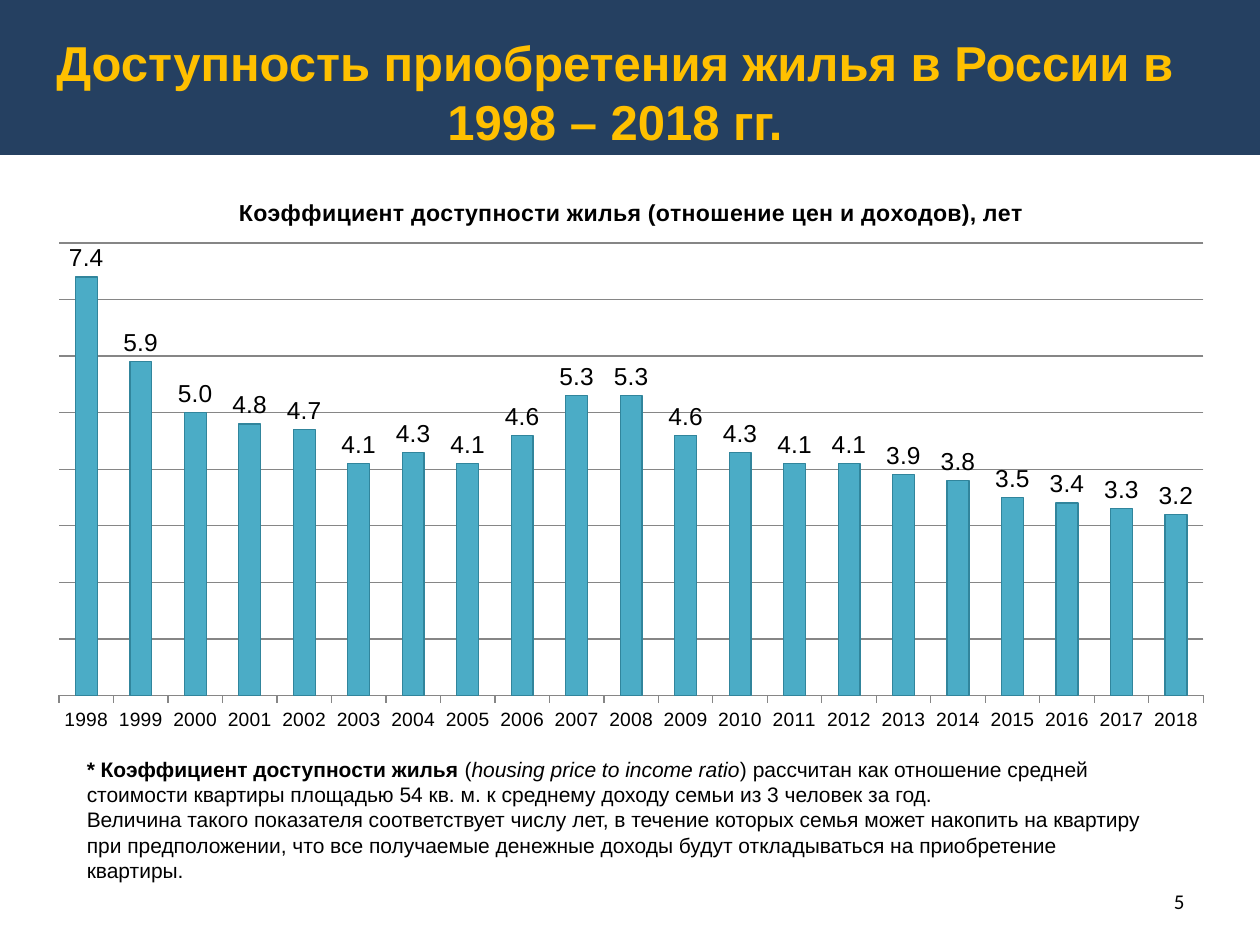
"""Build the slide on housing affordability in Russia, 1998-2018."""
from dataclasses import dataclass

from lxml import etree
from pptx import Presentation
from pptx.chart.data import CategoryChartData
from pptx.dml.color import RGBColor
from pptx.enum import chart as ch, shapes, text
from pptx.oxml.ns import qn
from pptx.util import Inches, Pt

COLORS = {"band": "254061", "title": "FFC000", "text": "000000",
          "bar": "4BACC6", "bar_line": "31859C", "grid": "868686"}
RATIOS = [7.4, 5.9, 5.0, 4.8, 4.7, 4.1, 4.3, 4.1, 4.6, 5.3, 5.3,
          4.6, 4.3, 4.1, 4.1, 3.9, 3.8, 3.5, 3.4, 3.3, 3.2]
PLOT = {"x": 0.02, "y": 0.12, "w": 0.96, "h": 0.8}


@dataclass
class Span:
    content: str
    bold: bool = False
    italic: bool = False


@dataclass
class Block:
    box: tuple[float, float, float, float]
    paragraphs: list[list[Span]]
    size: float
    font: str = "Arial"
    color: str = "text"
    align: text.PP_ALIGN = text.PP_ALIGN.LEFT
    anchor: text.MSO_ANCHOR = text.MSO_ANCHOR.MIDDLE


TITLE = Block((0.07, 0.21, 9.62, 1.04),
              [[Span("Доступность приобретения жилья в России в 1998 – 2018 гг.", bold=True)]],
              28, color="title", align=text.PP_ALIGN.CENTER, anchor=text.MSO_ANCHOR.TOP)
NUMBER = Block((7.17, 6.95, 2.33, 0.4), [[Span("5")]], 12, "Calibri",
               align=text.PP_ALIGN.RIGHT)
NOTE = Block((0.59, 5.72, 8.58, 1.57), [
    [Span("* Коэффициент доступности жилья ", bold=True), Span("("),
     Span("housing price to income ratio", italic=True),
     Span(") рассчитан как отношение средней стоимости квартиры площадью 54 кв. м. "
          "к среднему доходу семьи из 3 человек за год.")],
    [Span("Величина такого показателя соответствует числу лет, в течение которых семья "
          "может накопить на квартиру при предположении, что все получаемые денежные "
          "доходы будут откладываться на приобретение квартиры.")],
], 12)


def rgb(name: str) -> RGBColor:
    """Return a named colour."""
    return RGBColor.from_string(COLORS[name])


def style_font(font, size: float, color: str = "text", name: str = "Arial",
               bold: bool = False, italic: bool = False) -> None:
    """Set every property of a font."""
    font.name, font.size, font.bold, font.italic = name, Pt(size), bold, italic
    font.color.rgb = rgb(color)


def fill_text(sp, block: Block) -> None:
    """Place a shape and write its formatted paragraphs."""
    sp.left, sp.top, sp.width, sp.height = map(Inches, block.box)
    tf = sp.text_frame
    tf.word_wrap = True
    tf.auto_size = text.MSO_AUTO_SIZE.NONE
    tf.vertical_anchor = block.anchor
    for i, spans in enumerate(block.paragraphs):
        p = tf.add_paragraph() if i else tf.paragraphs[0]
        p.alignment = block.align
        for span in spans:
            r = p.add_run()
            r.text = span.content
            style_font(r.font, block.size, block.color, block.font, span.bold, span.italic)


def add_band(s) -> None:
    """Draw the header band behind the title."""
    sp = s.shapes.add_shape(shapes.MSO_SHAPE.RECTANGLE, 0, 0, Inches(10), Inches(1.23))
    sp.shadow.inherit = False
    sp.fill.solid()
    sp.fill.fore_color.rgb = rgb("band")
    sp.line.fill.background()
    s.shapes.title.element.addprevious(sp.element)


def set_plot_layout(chart) -> None:
    """Fix the inner plot area as fractions of the chart."""
    area = chart.element.find(".//" + qn("c:plotArea"))
    layout = area.find(qn("c:layout"))
    if layout is None:
        layout = etree.Element(qn("c:layout"))
        area.insert(0, layout)
    manual = etree.SubElement(layout, qn("c:manualLayout"))
    settings = {"layoutTarget": "inner", "xMode": "edge", "yMode": "edge", **PLOT}
    for tag, value in settings.items():
        etree.SubElement(manual, qn(f"c:{tag}")).set("val", str(value))


def add_ratio_chart(s) -> None:
    """Add the column chart of the price to income ratio."""
    data = CategoryChartData(number_format="#,##0.0")
    data.categories = [str(year) for year in range(1998, 2019)]
    data.add_series("Series 1", RATIOS)
    chart = s.shapes.add_chart(ch.XL_CHART_TYPE.COLUMN_CLUSTERED,
                               *map(Inches, (0.28, 1.39, 9.46, 4.49)), data).chart
    style_font(chart.font, 11)
    chart.has_legend = False
    chart.has_title = True
    p = chart.chart_title.text_frame.paragraphs[0]
    p.text = "Коэффициент доступности жилья (отношение цен и доходов), лет"
    style_font(p.runs[0].font, 13.2, bold=True)
    set_plot_layout(chart)

    years, values = chart.category_axis, chart.value_axis
    years.major_tick_mark = ch.XL_TICK_MARK.OUTSIDE
    values.visible = False
    values.minimum_scale, values.maximum_scale, values.major_unit = 0, 8, 1
    values.has_major_gridlines = True
    for line in (years.format.line, values.major_gridlines.format.line):
        line.color.rgb = rgb("grid")
        line.width = Pt(0.75)

    plot = chart.plots[0]
    plot.gap_width = 150
    plot.vary_by_categories = False
    bars = plot.series[0].format
    bars.fill.solid()
    bars.fill.fore_color.rgb = rgb("bar")
    bars.line.color.rgb = rgb("bar_line")
    bars.line.width = Pt(0.75)
    plot.has_data_labels = True
    labels = plot.data_labels
    labels.show_value = True
    labels.position = ch.XL_LABEL_POSITION.OUTSIDE_END
    labels.number_format, labels.number_format_is_linked = "#,##0.0", False
    style_font(labels.font, 14)


def main() -> None:
    """Build and save the presentation."""
    prs = Presentation()
    prs.slide_width, prs.slide_height = Inches(10), Inches(7.5)
    s = prs.slides.add_slide(prs.slide_layouts[5])
    add_band(s)
    fill_text(s.shapes.title, TITLE)
    for block in (NUMBER, NOTE):
        fill_text(s.shapes.add_textbox(*map(Inches, block.box)), block)
    add_ratio_chart(s)
    prs.save("out.pptx")


if __name__ == "__main__":
    main()
